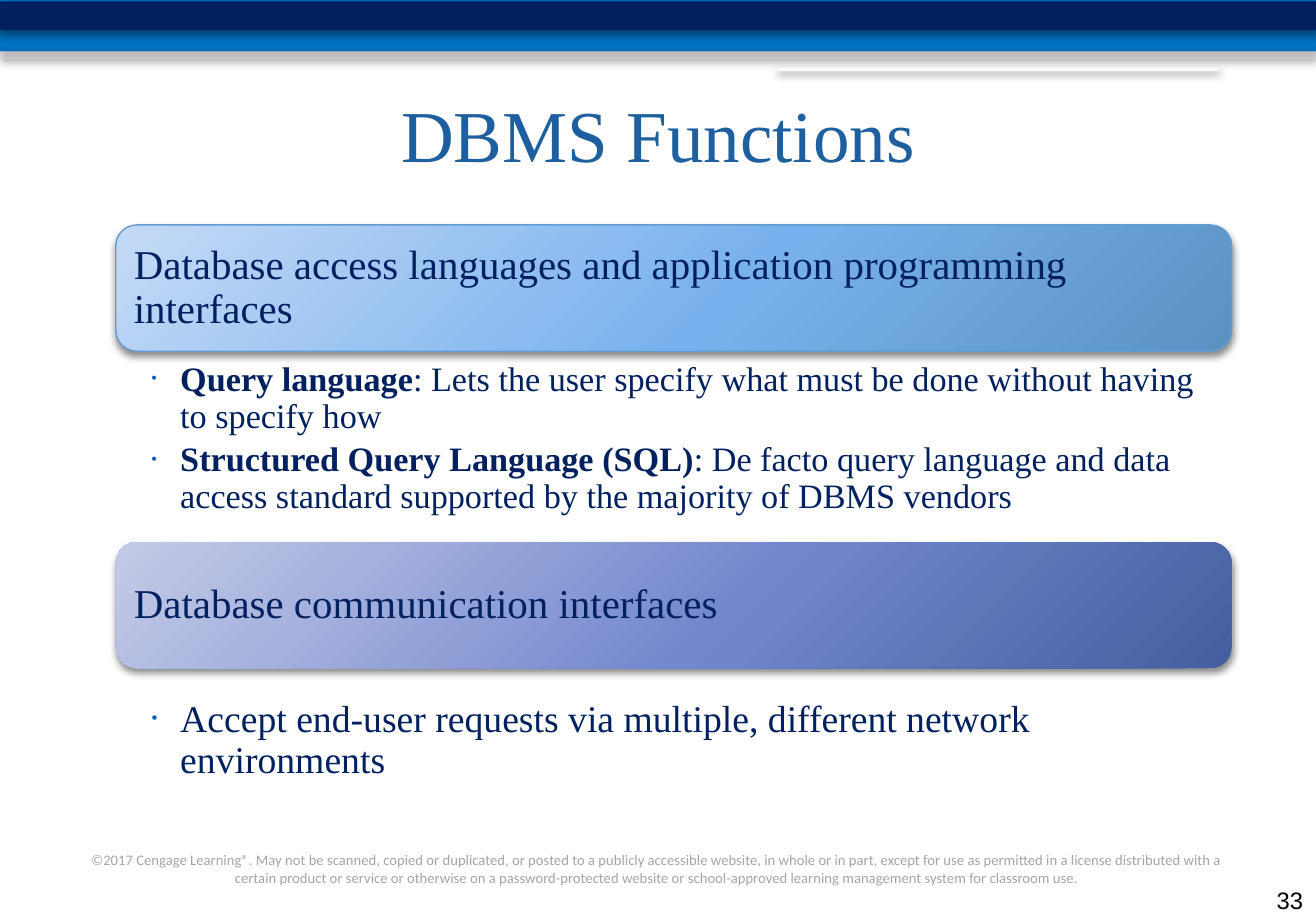
from lxml.etree import SubElement
from pptx import Presentation
from pptx.dml.color import RGBColor
from pptx.enum.shapes import MSO_SHAPE
from pptx.enum.text import MSO_ANCHOR, PP_ALIGN
from pptx.oxml.ns import qn
from pptx.util import Inches, Pt

SERIF = "Times New Roman"
NAVY = "002060"


def color(value):
    return RGBColor.from_string(value)


def add_color(parent, value, alpha=None):
    element = SubElement(parent, qn("a:srgbClr"), val=value)
    if alpha is not None:
        SubElement(element, qn("a:alpha"), val=str(alpha * 1000))


def add_shadow(shape, alpha, blur):
    shape.shadow.inherit = False
    effects = shape._element.spPr.find(qn("a:effectLst"))
    shadow = SubElement(effects, qn("a:outerShdw"), blurRad=str(Pt(blur)),
                        dist=str(Pt(2)), dir="5400000", rotWithShape="0")
    add_color(shadow, "000000", alpha)


def add_bar(page, kind, bounds, fill, alpha=None):
    bar = page.shapes.add_shape(kind, *map(Inches, bounds))
    bar.fill.solid()
    bar.fill.fore_color.rgb = color(fill)
    if alpha is not None:
        solid = bar._element.spPr.find(qn("a:solidFill"))
        solid.clear()
        add_color(solid, fill, alpha)
    bar.line.fill.background()
    add_shadow(bar, 40, 4.1)


def format_frame(frame, insets, anchor):
    left, top, right, bottom = map(Inches, insets)
    settings = {"word_wrap": True, "vertical_anchor": anchor,
                "margin_left": left, "margin_top": top,
                "margin_right": right, "margin_bottom": bottom}
    for name, value in settings.items():
        setattr(frame, name, value)


def add_span(para, text, size, font, text_color, bold=False):
    span = para.add_run()
    span.text = text
    for name, value in {"size": Pt(size), "name": font, "bold": bold}.items():
        setattr(span.font, name, value)
    span.font.color.rgb = color(text_color)


def add_label(page, bounds, text, size, font, text_color, align,
              anchor=MSO_ANCHOR.TOP):
    box = page.shapes.add_textbox(*map(Inches, bounds))
    format_frame(box.text_frame, (0.1, 0.05, 0.1, 0.05), anchor)
    para = box.text_frame.paragraphs[0]
    para.alignment = align
    add_span(para, text, size, font, text_color)


def add_banner(page, top, text, stops, outline=None):
    banner = page.shapes.add_shape(
        MSO_SHAPE.ROUNDED_RECTANGLE, *map(Inches, (0.88, top, 8.48, 0.96)))
    # Three-stop diagonal gradient
    banner.fill.gradient()
    banner.fill.gradient_angle = 135
    stop_list = banner._element.spPr.find(qn("a:gradFill")).find(qn("a:gsLst"))
    stop_list.clear()
    for position, value in zip((0, 45, 100), stops):
        stop = SubElement(stop_list, qn("a:gs"), pos=str(position * 1000))
        add_color(stop, value)
    if outline:
        banner.line.color.rgb = color(outline)
        banner.line.width = Pt(0.75)
    else:
        banner.line.fill.background()
    add_shadow(banner, 45, 4)
    format_frame(banner.text_frame, (0.09,) * 4, MSO_ANCHOR.MIDDLE)
    para = banner.text_frame.paragraphs[0]
    para.alignment = PP_ALIGN.LEFT
    para.line_spacing = 0.9
    add_span(para, text, 22.4, SERIF, NAVY)


def add_bullet(para):
    properties = para._p.get_or_add_pPr()
    properties.set("marL", str(Inches(0.23)))
    properties.set("indent", str(Inches(-0.23)))
    add_color(SubElement(properties, qn("a:buClr")), "0E58C4")
    SubElement(properties, qn("a:buFont"), typeface=SERIF)
    SubElement(properties, qn("a:buChar"), char="∙")


def add_bullet_list(page, top, height, size, items):
    box = page.shapes.add_textbox(*map(Inches, (0.88, top, 8.48, height)))
    frame = box.text_frame
    format_frame(frame, (0.26, 0.03, 0.16, 0.03), MSO_ANCHOR.TOP)
    for index, (term, text) in enumerate(items):
        para = frame.add_paragraph() if index else frame.paragraphs[0]
        add_bullet(para)
        para.line_spacing = 0.9
        if index:
            para.space_before = Pt(3.7)
        if term:
            add_span(para, term, size, SERIF, NAVY, bold=True)
        add_span(para, text, size, SERIF, NAVY)


def main():
    deck = Presentation()
    deck.slide_width, deck.slide_height = Inches(10), Inches(7)
    page = deck.slides.add_slide(deck.slide_layouts[6])

    # Header bars
    add_bar(page, MSO_SHAPE.ROUNDED_RECTANGLE, (5.91, 0.51, 3.35, 0.03), "FFFFFF")
    add_bar(page, MSO_SHAPE.RECTANGLE, (0, 0, 10, 0.39), "0070C0")
    add_bar(page, MSO_SHAPE.RECTANGLE, (0, 0.01, 10, 0.22), NAVY)
    add_bar(page, MSO_SHAPE.RECTANGLE, (0, 0.39, 10, 0.06), "D7D2D8", 50)

    # Copyright, title and page number
    add_label(page, (0.58, 6.42, 8.83, 0.36),
              "©2017 Cengage Learning®. May not be scanned, copied or duplicated, "
              "or posted to a publicly accessible website, in whole or in part, "
              "except for use as permitted in a license distributed with a certain "
              "product or service or otherwise on a password-protected website or "
              "school-approved learning management system for classroom use.",
              8, "Calibri", "A5A5A5", PP_ALIGN.CENTER)
    add_label(page, (0.5, 0.47, 9, 1.09), "DBMS Functions", 40, SERIF, "1E5F9F",
              PP_ALIGN.CENTER, MSO_ANCHOR.MIDDLE)
    add_label(page, (9.5, 6.69, 0.5, 0.31), "33", 13, "Arial", "000000",
              PP_ALIGN.RIGHT, MSO_ANCHOR.BOTTOM)

    # Access languages
    add_banner(page, 1.71,
               "Database access languages and application programming interfaces",
               ("5B92C2", "79B1EE", "C4DAF6"), "629DD1")
    add_bullet_list(page, 2.72, 1.48, 18.7, [
        ("Query language",
         ": Lets the user specify what must be done without having to specify how"),
        ("Structured Query Language (SQL)",
         ": De facto query language and data access standard supported by the "
         "majority of DBMS vendors"),
    ])

    # Communication interfaces
    add_banner(page, 4.12, "Database communication interfaces",
               ("445FA0", "7387CD", "C4CBE7"))
    add_bullet_list(page, 5.29, 0.85, 20.6, [
        ("", "Accept end-user requests via multiple, different network environments"),
    ])

    deck.save("out.pptx")


if __name__ == "__main__":
    main()
